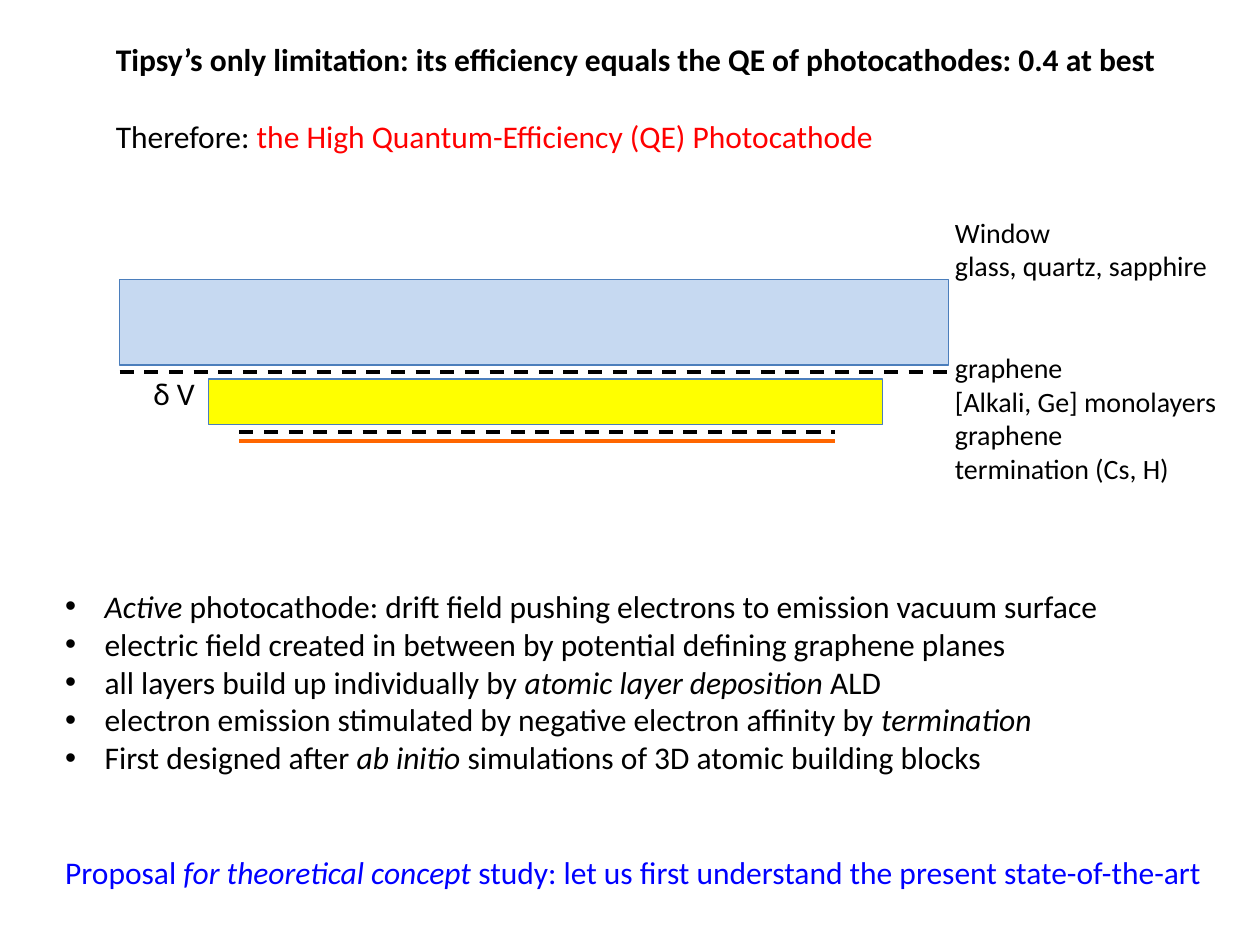
import pptx
import pptx.util
import pptx.dml.color
import pptx.enum.dml
import pptx.enum.shapes
import pptx.enum.text
import pptx.oxml.ns
import lxml.etree

Pt = pptx.util.Pt
FONT = "Calibri"
BLACK, RED, BLUE, ORANGE = "000000", "FF0000", "0000FF", "FF6600"
BULLET_INDENT = 22.5

# Content: a paragraph is (runs, lines of space before, bulleted)
# and a run is (text, colour, style), the style being "", "b" or "i"
TITLE = [
    ([("Tipsy’s only limitation: its efficiency equals the QE of photocathodes: 0.4 at best",
       BLACK, "b")], 0, False),
    ([("Therefore: ", BLACK, ""),
      ("the High Quantum-Efficiency (QE) Photocathode", RED, "")], 1, False),
]
LAYER_LABELS = [([(text, BLACK, "")], gap, False) for text, gap in [
    ("Window", 0),
    ("glass, quartz, sapphire", 0),
    ("graphene", 2),
    ("[Alkali, Ge] monolayers", 0),
    ("graphene", 0),
    ("termination (Cs, H)", 0),
]]
POINTS = [
    [("Active", "i"),
     (" photocathode: drift field pushing electrons to emission vacuum surface", "")],
    [("electric field created in between by potential defining graphene planes", "")],
    [("all layers build up individually by ", ""),
     ("atomic layer deposition ", "i"), ("ALD", "")],
    [("electron emission stimulated by negative electron affinity by ", ""),
     ("termination", "i")],
    [("First designed after ", ""), ("ab initio ", "i"),
     ("simulations of 3D atomic building blocks", "")],
]
PROPOSAL = [
    ("Proposal ", BLUE, ""),
    ("for theoretical concept ", BLUE, "i"),
    ("study: let us first understand the present state-of-the-art", BLUE, ""),
]
BODY = [([(text, BLACK, style) for text, style in runs], 0, True) for runs in POINTS]
BODY.append((PROPOSAL, 2, False))
VOLTAGE = [([("δ V", BLACK, "")], 0, False)]

# Text boxes: paragraphs, size, (left, top, width, height)
TEXTS = [
    (LAYER_LABELS, 16, (538.6, 119.5, 167, 162.7)),
    (BODY, 18, (30.2, 331.9, 668.9, 181.4)),
    (VOLTAGE, 18, (80.6, 210.2, 38.2, 28.8)),
]
# Layers: fill, (left, top, width, height)
SLABS = [
    ("FFFF00", (119.2, 216.5, 385.2, 26)),
    ("C6D9F1", (68.4, 159.6, 473.8, 49)),
]
# Sheets: colour, dashed, left, right, height on the page
SHEETS = [
    (BLACK, True, 68.4, 542.2, 212.6),
    (BLACK, True, 136.8, 477.4, 247),
    (ORANGE, False, 136.8, 477.4, 252),
]


def color(value):
    return pptx.dml.color.RGBColor.from_string(value)


def place(shape, bounds):
    shape.left, shape.top, shape.width, shape.height = map(Pt, bounds)


def add_bullet(para):
    properties = para._p.get_or_add_pPr()
    properties.set("marL", str(Pt(BULLET_INDENT)))
    properties.set("indent", str(-Pt(BULLET_INDENT)))
    for tag, key, value in [("a:buFont", "typeface", "Arial"), ("a:buChar", "char", "•")]:
        lxml.etree.SubElement(properties, pptx.oxml.ns.qn(tag)).set(key, value)


def write(shape, paragraphs, size):
    frame = shape.text_frame
    frame.word_wrap = False
    frame.auto_size = pptx.enum.text.MSO_AUTO_SIZE.SHAPE_TO_FIT_TEXT
    frame.vertical_anchor = pptx.enum.text.MSO_ANCHOR.TOP
    for index, (runs, gap, bulleted) in enumerate(paragraphs):
        para = frame.add_paragraph() if index else frame.paragraphs[0]
        para.alignment = pptx.enum.text.PP_ALIGN.LEFT
        para.space_before = Pt(round(gap * size * 1.22, 1))
        if bulleted:
            add_bullet(para)
        for text, ink, style in runs:
            span = para.add_run()
            span.text = text
            span.font.name = FONT
            span.font.size = Pt(size)
            span.font.bold = style == "b"
            span.font.italic = style == "i"
            span.font.color.rgb = color(ink)


deck = pptx.Presentation()
deck.slide_width, deck.slide_height = Pt(720), Pt(540)
page = deck.slides.add_slide(deck.slide_layouts[5])

# Title
place(page.shapes.title, (59, 19.4, 617, 72.7))
write(page.shapes.title, TITLE, 18)

# Photocathode layers
for fill, bounds in SLABS:
    slab = page.shapes.add_shape(pptx.enum.shapes.MSO_SHAPE.RECTANGLE, *map(Pt, bounds))
    slab.shadow.inherit = False
    slab.fill.solid()
    slab.fill.fore_color.rgb = color(fill)
    slab.line.color.rgb = color("4B7EBC")
    slab.line.width = Pt(0.75)

for ink, dashed, left, right, height in SHEETS:
    sheet = page.shapes.add_connector(
        pptx.enum.shapes.MSO_CONNECTOR.STRAIGHT, Pt(left), Pt(height), Pt(right), Pt(height))
    sheet.line.color.rgb = color(ink)
    sheet.line.width = Pt(2)
    if dashed:
        sheet.line.dash_style = pptx.enum.dml.MSO_LINE.DASH
    lxml.etree.SubElement(sheet._element.spPr, pptx.oxml.ns.qn("a:effectLst"))

# Labels, bullet points and proposal
for paragraphs, size, bounds in TEXTS:
    box = page.shapes.add_textbox(*map(Pt, bounds))
    write(box, paragraphs, size)

deck.save("out.pptx")
